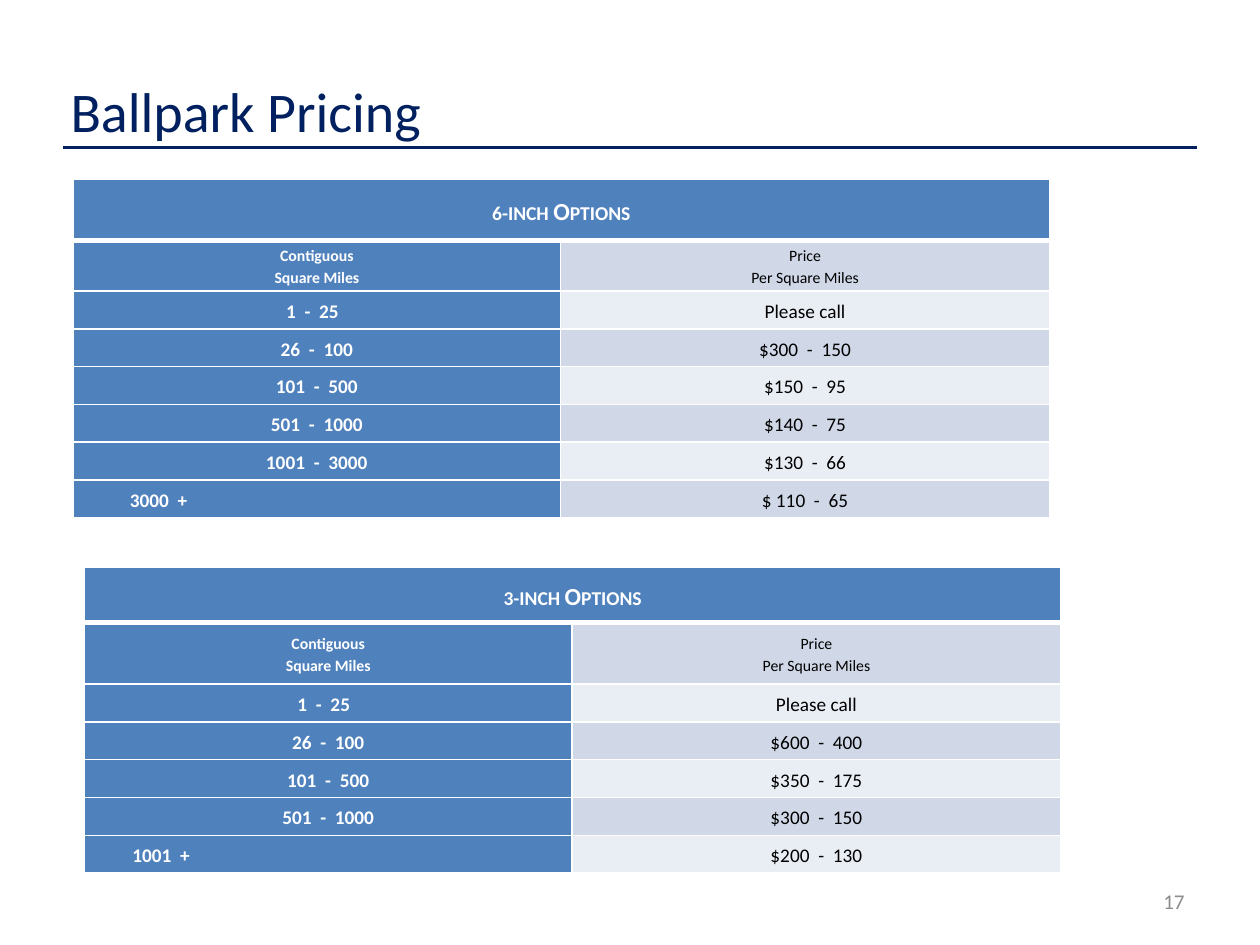
"""Build the Ballpark Pricing slide with its two price tables."""
from dataclasses import dataclass

from lxml import etree
from pptx import Presentation
from pptx.dml.color import RGBColor
from pptx.enum.shapes import MSO_CONNECTOR
from pptx.enum.text import MSO_ANCHOR, PP_ALIGN
from pptx.oxml.ns import qn
from pptx.util import Inches, Length, Pt

NAVY = RGBColor(0x00, 0x20, 0x60)
GREY = RGBColor(0x8C, 0x8C, 0x8C)
BLUE = RGBColor(0x4F, 0x81, 0xBD)
WHITE = RGBColor(0xFF, 0xFF, 0xFF)
BLACK = RGBColor(0x00, 0x00, 0x00)
BANDS = (RGBColor(0xD0, 0xD8, 0xE8), RGBColor(0xE9, 0xED, 0xF4))
LEFT, CENTER, RIGHT = PP_ALIGN.LEFT, PP_ALIGN.CENTER, PP_ALIGN.RIGHT
MIDDLE = MSO_ANCHOR.MIDDLE
STRAIGHT = MSO_CONNECTOR.STRAIGHT
FONT = "Calibri"
TITLE_ONLY = 5
COLUMNS, ROWS = 100, 75
CELL_INSET = 0.7
PRICE_ROW = 3
COLUMN_WIDTHS = (38.7, 38.8)


@dataclass(frozen=True)
class TextStyle:
    size: float
    color: RGBColor
    bold: bool = False
    small_caps: bool = False


@dataclass(frozen=True)
class CellLook:
    fill: RGBColor
    style: TextStyle
    align: PP_ALIGN = CENTER
    left_inset: float = CELL_INSET
    right_inset: float = CELL_INSET
    bottom_border: float = 1


@dataclass(frozen=True)
class PriceTable:
    heading: str
    left: float
    top: float
    heading_row: float
    label_row: float
    last_inset: float
    prices: tuple[tuple[str, str], ...]


TABLES = (
    PriceTable("6-inch Options", 5.8, 14.2, 4.9, 4, 4.5, (
        ("1  -  25", "Please call"),
        ("26  -  100", "$300  -  150"),
        ("101  -  500", "$150  -  95"),
        ("501  -  1000", "$140  -  75"),
        ("1001  -  3000", "$130  -  66"),
        ("3000  +", "$ 110  -  65"),
    )),
    PriceTable("3-inch Options", 6.7, 45, 4.4, 4.9, 3.8, (
        ("1  -  25", "Please call"),
        ("26  -  100", "$600  -  400"),
        ("101  -  500", "$350  -  175"),
        ("501  -  1000", "$300  -  150"),
        ("1001  +", "$200  -  130"),
    )),
)


def grid(units: float) -> Length:
    """Convert grid columns or rows to a length."""
    return Inches(units * 10 / COLUMNS)


def place(box, left: float, top: float, width: float, height: float) -> None:
    """Move and size a box on the grid."""
    box.left, box.top = grid(left), grid(top)
    box.width, box.height = grid(width), grid(height)


def write(frame, lines: list[str], style: TextStyle, align: PP_ALIGN, spacing: float = 1) -> None:
    """Write each line as one formatted paragraph."""
    for index, line in enumerate(lines):
        para = frame.add_paragraph() if index else frame.paragraphs[0]
        para.alignment, para.line_spacing = align, spacing
        span = para.add_run()
        span.text = line
        font = span.font
        font.name, font.size, font.bold = FONT, Pt(style.size), style.bold
        font.color.rgb = style.color
        if style.small_caps:
            span._r.get_or_add_rPr().set("cap", "small")


def add_borders(cell, bottom_width: float) -> None:
    """Give a cell white borders ahead of its fill."""
    properties = cell._tc.get_or_add_tcPr()
    for index, side in enumerate(("lnL", "lnR", "lnT", "lnB")):
        width = bottom_width if side == "lnB" else 1
        border = etree.Element(qn(f"a:{side}"), w=str(Pt(width)))
        fill = etree.SubElement(border, qn("a:solidFill"))
        etree.SubElement(fill, qn("a:srgbClr"), val=str(WHITE))
        properties.insert(index, border)


def fill_cell(cell, lines: list[str], look: CellLook) -> None:
    """Format one table cell and write its text."""
    cell.fill.solid()
    cell.fill.fore_color.rgb = look.fill
    cell.vertical_anchor = MIDDLE
    cell.margin_left, cell.margin_right = grid(look.left_inset), grid(look.right_inset)
    cell.margin_top = cell.margin_bottom = 0
    add_borders(cell, look.bottom_border)
    if lines:
        write(cell.text_frame, lines, look.style, look.align, 1.15)


def add_price_table(page, spec: PriceTable) -> None:
    """Draw a price table with its heading, labels and prices."""
    heights = [spec.heading_row, spec.label_row] + [PRICE_ROW] * len(spec.prices)
    table = page.shapes.add_table(
        len(heights), len(COLUMN_WIDTHS), grid(spec.left), grid(spec.top),
        grid(sum(COLUMN_WIDTHS)), grid(sum(heights))).table
    for column, width in zip(table.columns, COLUMN_WIDTHS):
        column.width = grid(width)
    for row, height in zip(table.rows, heights):
        row.height = grid(height)

    heading = CellLook(BLUE, TextStyle(14, WHITE, True, True), bottom_border=3)
    table.cell(0, 0).merge(table.cell(0, 1))
    fill_cell(table.cell(0, 0), [spec.heading], heading)
    fill_cell(table.cell(0, 1), [], heading)

    labels = (["Contiguous", "Square Miles"], ["Price", "Per Square Miles"])
    body = [labels] + [([miles], [price]) for miles, price in spec.prices]
    for index, (miles, price) in enumerate(body):
        size = 11 if index else 9
        miles_style = TextStyle(size, WHITE, True)
        if index == len(body) - 1:
            miles_look = CellLook(BLUE, miles_style, LEFT, spec.last_inset)
        else:
            right_inset = 1.4 if index == 1 else CELL_INSET
            miles_look = CellLook(BLUE, miles_style, right_inset=right_inset)
        price_look = CellLook(BANDS[index % 2], TextStyle(size, BLACK))
        fill_cell(table.cell(index + 1, 0), miles, miles_look)
        fill_cell(table.cell(index + 1, 1), price, price_look)


def add_rule(page) -> None:
    """Draw the rule under the title."""
    rule = page.shapes.add_connector(STRAIGHT, grid(5), grid(11.7), grid(95), grid(11.7))
    rule.line.color.rgb, rule.line.width = NAVY, Pt(2)
    etree.SubElement(rule._element.spPr, qn("a:effectLst"))


def add_page_number(page) -> None:
    """Write the page number at the lower right."""
    box = page.shapes.add_textbox(grid(71.7), grid(69.5), grid(23.3), grid(4))
    frame = box.text_frame
    frame.word_wrap, frame.vertical_anchor = True, MIDDLE
    write(frame, ["17"], TextStyle(12, GREY), RIGHT)


def main() -> None:
    """Build and save the deck."""
    deck = Presentation()
    deck.slide_width, deck.slide_height = grid(COLUMNS), grid(ROWS)
    page = deck.slides.add_slide(deck.slide_layouts[TITLE_ONLY])
    add_rule(page)
    add_page_number(page)
    title = page.shapes.title
    place(title, 4.6, 4.7, 90, 8)
    title.text_frame.vertical_anchor = MIDDLE
    write(title.text_frame, ["Ballpark Pricing"], TextStyle(32, NAVY), LEFT)
    for spec in TABLES:
        add_price_table(page, spec)
    deck.save("out.pptx")


if __name__ == "__main__":
    main()
